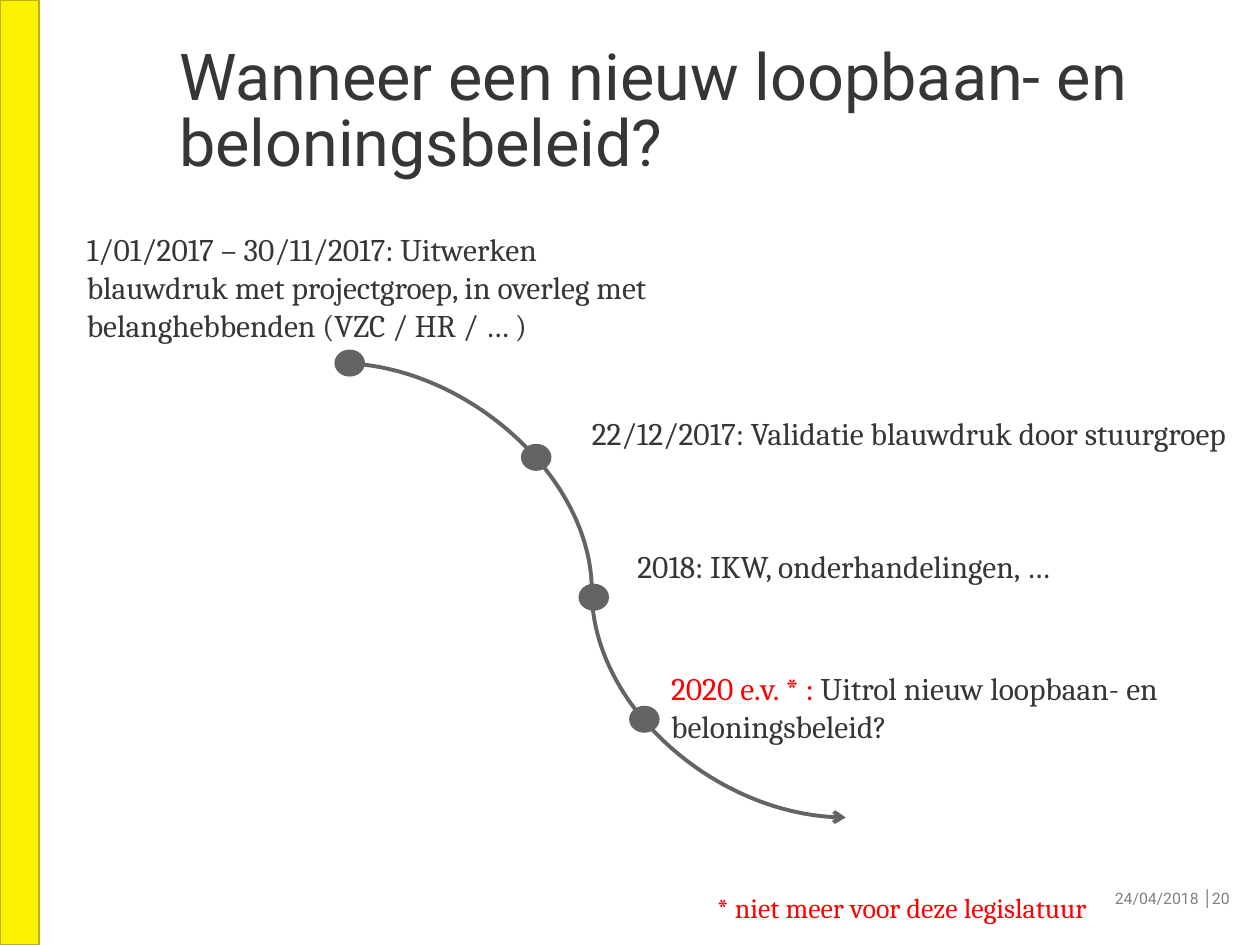
from dataclasses import dataclass

from lxml.etree import SubElement
from pptx import Presentation
from pptx.dml.color import RGBColor
from pptx.enum.shapes import MSO_CONNECTOR, MSO_SHAPE
from pptx.enum.text import MSO_ANCHOR, MSO_AUTO_SIZE, PP_ALIGN
from pptx.oxml.ns import qn
from pptx.util import Cm, Pt


@dataclass(frozen=True)
class Theme:
    yellow: str = "FFF200"
    olive: str = "BDB300"
    dark: str = "373636"
    steel: str = "646464"
    grey: str = "808080"
    red: str = "FF0000"
    heading_font: str = "Roboto"
    body_font: str = "Cambria"
    title_size: int = 37
    title_leading: int = 38
    label_size: int = 18
    note_size: int = 16
    footer_size: int = 9


THEME = Theme()


def rgb(value):
    return RGBColor.from_string(value)


def write(frame, *runs, font=THEME.body_font, size=THEME.label_size,
          color=THEME.dark, align=PP_ALIGN.LEFT, anchor=MSO_ANCHOR.TOP,
          wrap=True, leading=None, grow=True):
    """Fill a text frame; each run is (text, overrides) with color or bold."""
    frame.word_wrap = wrap
    frame.vertical_anchor = anchor
    frame.auto_size = (MSO_AUTO_SIZE.SHAPE_TO_FIT_TEXT if grow
                       else MSO_AUTO_SIZE.NONE)
    paragraph = frame.paragraphs[0]
    paragraph.alignment = align
    if leading:
        paragraph.line_spacing = Pt(leading)
    for words, overrides in runs:
        run = paragraph.add_run()
        run.text = words
        run.font.name = font
        run.font.size = Pt(size)
        run.font.bold = overrides.get("bold", False)
        run.font.color.rgb = rgb(overrides.get("color", color))


def add_text(slide, box, *runs, **formatting):
    label = slide.shapes.add_textbox(*map(Cm, box))
    write(label.text_frame, *runs, **formatting)


def add_solid(slide, preset, box, fill, outline):
    solid = slide.shapes.add_shape(preset, *map(Cm, box))
    solid.shadow.inherit = False
    solid.fill.solid()
    solid.fill.fore_color.rgb = rgb(fill)
    solid.line.color.rgb = rgb(outline)
    solid.line.width = Pt(1)


def add_title(slide, box):
    title = slide.shapes.title
    title.left, title.top, title.width, title.height = map(Cm, box)
    frame = title.text_frame
    frame.margin_left = frame.margin_right = 0
    frame.margin_top = frame.margin_bottom = 0
    write(frame, ("Wanneer een nieuw loopbaan- en beloningsbeleid?", {}),
          font=THEME.heading_font, size=THEME.title_size,
          leading=THEME.title_leading, grow=False)


def add_timeline(slide, box):
    left, top, width, height = box

    # Curved arrow through all milestones
    curve = slide.shapes.add_connector(
        MSO_CONNECTOR.CURVE, Cm(left), Cm(top),
        Cm(left + width), Cm(top + height))
    curve.line.color.rgb = rgb(THEME.steel)
    curve.line.width = Pt(2.25)
    SubElement(curve.line._get_or_add_ln(), qn("a:tailEnd"), type="arrow")
    SubElement(curve._element.spPr, qn("a:effectLst"))

    # Milestones: dot centre, label box (both from the corner), wrap, runs
    milestones = [
        ((0.24, 0), (-5.31, -2.8, 11.96, 2.57), True,
         [("1/01/2017 – 30/11/2017: Uitwerken blauwdruk met projectgroep, "
           "in overleg met belanghebbenden (VZC / HR / … )", {})]),
        ((4, 1.9), (4.87, 0.91, 14.05, 1.02), False,
         [("22/12/2017: Validatie blauwdruk door stuurgroep", {})]),
        ((5.16, 4.72), (5.79, 3.58, 9.04, 1.02), False,
         [("2018: IKW, onderhandelingen, …", {})]),
        ((6.18, 7.18), (6.47, 6.04, 10.46, 1.8), True,
         [("2020 e.v. * : ", {"color": THEME.red}),
          ("Uitrol nieuw loopbaan- en beloningsbeleid?", {})]),
    ]
    dot_width, dot_height = 0.58, 0.51
    for (x, y), (dx, dy, label_width, label_height), wrap, runs in milestones:
        dot = (left + x - dot_width / 2, top + y - dot_height / 2,
               dot_width, dot_height)
        add_solid(slide, MSO_SHAPE.OVAL, dot, THEME.steel, THEME.steel)
        add_text(slide, (left + dx, top + dy, label_width, label_height),
                 *runs, wrap=wrap)


def add_footer(slide, box):
    left, top, width, height = box
    # Date and page number
    add_text(slide, box, ("24/04/2018 ", {}), ("│", {"bold": True}),
             ("20", {}), font=THEME.heading_font, size=THEME.footer_size,
             color=THEME.grey, align=PP_ALIGN.RIGHT,
             anchor=MSO_ANCHOR.MIDDLE, grow=False)
    # Footnote to the last milestone
    add_text(slide, (left - 4.9, top + 0.23, 8.61, 0.94),
             ("* niet meer voor deze legislatuur", {}),
             size=THEME.note_size, color=THEME.red, wrap=False)


def main():
    deck = Presentation()
    deck.slide_width, deck.slide_height = Cm(25.4), Cm(19.05)
    slide = deck.slides.add_slide(deck.slide_layouts[5])
    # Side bar
    add_solid(slide, MSO_SHAPE.RECTANGLE, (0, 0, 0.79, 19.05),
              THEME.yellow, THEME.olive)
    add_title(slide, (3.61, 0.94, 20.6, 3.1))
    add_timeline(slide, (6.81, 7.32, 10.24, 9.16))
    add_footer(slide, (19.1, 17.6, 5.94, 1.02))
    deck.save("out.pptx")


if __name__ == "__main__":
    main()
